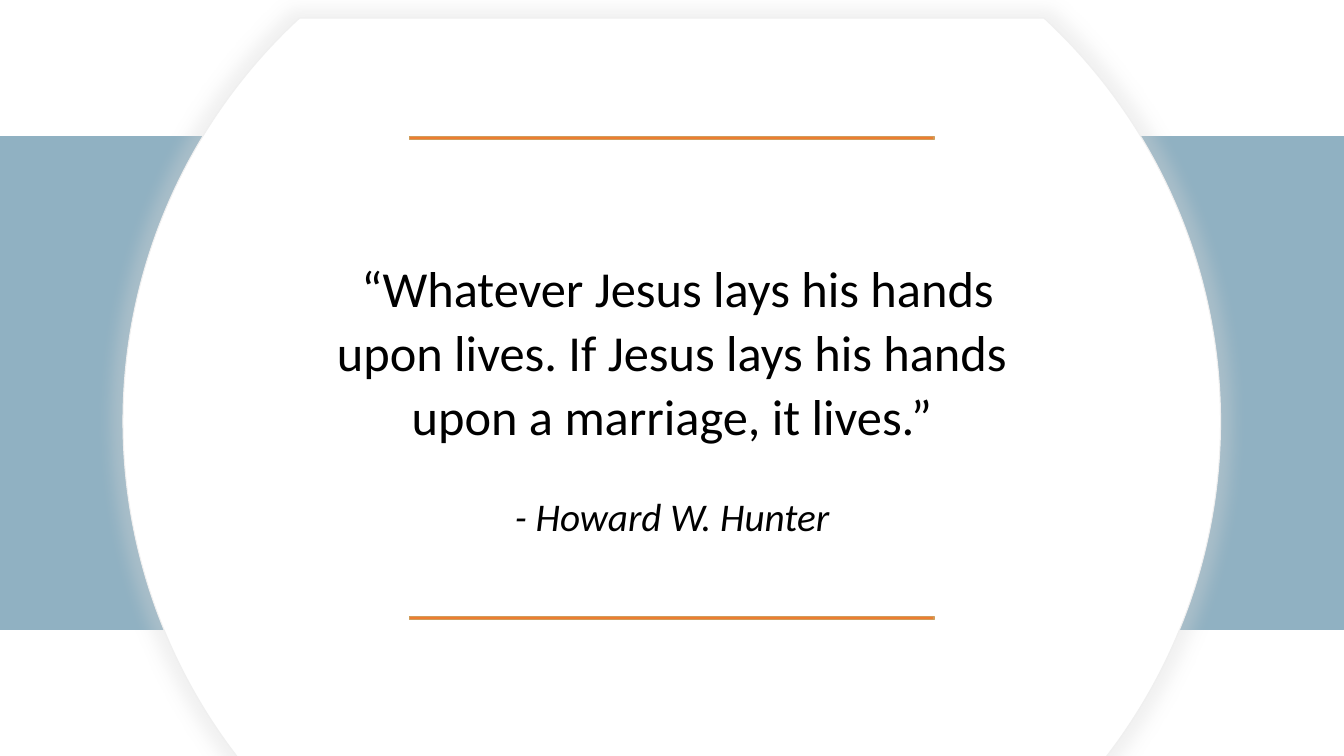
import math

import lxml.etree
import pptx
import pptx.dml.color
import pptx.enum.shapes
import pptx.enum.text
import pptx.oxml
import pptx.oxml.ns
import pptx.util
from pptx.util import Cm

RGBColor = pptx.dml.color.RGBColor
WHITE = RGBColor(0xFF, 0xFF, 0xFF)
BLACK = RGBColor(0x00, 0x00, 0x00)
GREY = RGBColor(0x66, 0x66, 0x66)
PALE_GREY = RGBColor(0xEF, 0xEF, 0xEF)
BLUE = RGBColor(0x90, 0xB1, 0xC2)
ORANGE = RGBColor(0xED, 0x7D, 0x31)
TAN = RGBColor(0xD0, 0x9D, 0x5C)


def paint(sp, fill, line):
    sp.shadow.inherit = False
    sp.fill.solid()
    sp.fill.fore_color.rgb = fill
    sp.line.color.rgb = line
    sp.line.width = pptx.util.Pt(0.75)


def add_bar(left, top, width, height, fill, line):
    sp = slide.shapes.add_shape(
        pptx.enum.shapes.MSO_SHAPE.RECTANGLE,
        Cm(left), Cm(top), Cm(width), Cm(height))
    paint(sp, fill, line)


prs = pptx.Presentation()
prs.slide_width = Cm(33.87)
prs.slide_height = Cm(19.05)
slide = prs.slides.add_slide(prs.slide_layouts[6])

add_bar(0, 3.43, 33.87, 12.44, BLUE, BLUE)

# Right side of a circle cut flat at the top and the bottom:
# two arcs, each an end point, two control points and an end point
cx, cy, radius = 16.93, 10.62, 13.83
top_angle = math.asin((0.46 - cy) / radius)
bottom_angle = math.asin((19.5 - cy) / radius)
right_side = [(radius * math.cos(top_angle), radius * math.sin(top_angle))]
for start, end in ((top_angle, 0), (0, bottom_angle)):
    pull = radius * 4 / 3 * math.tan((end - start) / 4)
    for angle, reach in ((start, pull), (end, -pull), (end, 0)):
        right_side.append((radius * math.cos(angle) - reach * math.sin(angle),
                           radius * math.sin(angle) + reach * math.cos(angle)))
points = [(Cm(cx + x), Cm(cy + y)) for x, y in right_side]
points += [(Cm(cx - x), Cm(cy + y)) for x, y in reversed(right_side)]
builder = slide.shapes.build_freeform(*points[0])
builder.add_line_segments(points[1:], close=True)
disc = builder.convert_to_shape()
paint(disc, WHITE, PALE_GREY)

# Turn each arc's three segments into one curve
segments = list(disc._element.iter(pptx.oxml.ns.qn("a:lnTo")))
for first in (0, 3, 7, 10):
    curve = lxml.etree.Element(pptx.oxml.ns.qn("a:cubicBezTo"))
    segments[first].addprevious(curve)
    for segment in segments[first:first + 3]:
        curve.append(segment[0])
        segment.getparent().remove(segment)

# Soft shadow, slightly larger than the disc
effects = disc._element.spPr.find(pptx.oxml.ns.qn("a:effectLst"))
shadow = lxml.etree.SubElement(
    effects, pptx.oxml.ns.qn("a:outerShdw"), blurRad=str(pptx.util.Pt(11)),
    sx="102000", sy="102000", algn="ctr", rotWithShape="0")
color = lxml.etree.SubElement(shadow, pptx.oxml.ns.qn("a:srgbClr"), val="D8D8D8")
lxml.etree.SubElement(color, pptx.oxml.ns.qn("a:alpha"), val="37000")

for top in (3.43, 15.54):
    add_bar(10.33, top, 13.21, 0.08, ORANGE, TAN)

quote = slide.shapes.add_textbox(Cm(7.41), Cm(5.38), Cm(19.05), Cm(9.22))
tf = quote.text_frame
tf.word_wrap = True
tf.vertical_anchor = pptx.enum.text.MSO_ANCHOR.MIDDLE
tf.margin_left = tf.margin_right = tf.margin_top = tf.margin_bottom = Cm(0.25)

paragraphs = [
    (0, 36, False, [
        (" ", GREY),
        ("“Whatever Jesus lays his hands upon lives. "
         "If Jesus lays his hands upon a marriage, it lives.”", BLACK)]),
    (31, 28, True, [("- Howard W. Hunter", BLACK)]),
]
for i, (space_before, size, italic, runs) in enumerate(paragraphs):
    p = tf.add_paragraph() if i else tf.paragraphs[0]
    p.alignment = pptx.enum.text.PP_ALIGN.CENTER
    p.line_spacing = 1.06
    p.space_before = pptx.util.Pt(space_before)
    for text, ink in runs:
        r = p.add_run()
        r.text = text
        r.font.name = "Calibri"
        r.font.size = pptx.util.Pt(size)
        r.font.italic = italic
        r.font.color.rgb = ink

prs.save("out.pptx")
